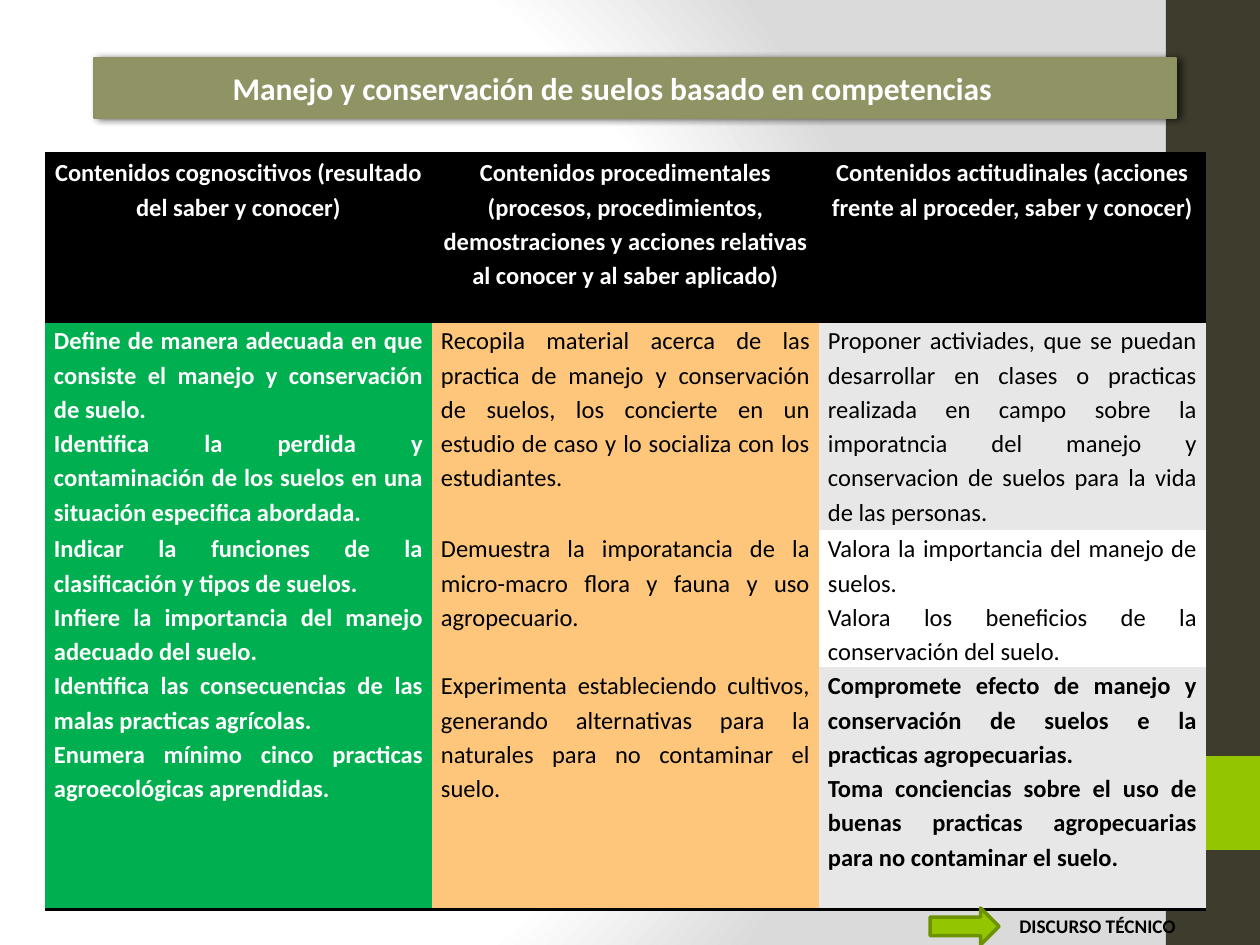
from dataclasses import dataclass

from lxml.etree import SubElement
from pptx import Presentation
from pptx.dml.color import RGBColor
from pptx.enum.shapes import MSO_SHAPE as Shape
from pptx.enum.text import MSO_ANCHOR as Anchor, MSO_AUTO_SIZE as AutoSize, PP_ALIGN as Align
from pptx.oxml import parse_xml
from pptx.oxml.ns import nsdecls, qn
from pptx.util import Emu, Pt


@dataclass(frozen=True)
class Theme:
    font: str = "Calibri"
    title_size: int = 18
    table_size: int = 14
    caption_size: int = 11
    white: str = "FFFFFF"
    black: str = "000000"
    shade: str = "DADADA"
    dark: str = "3E3D2D"
    lime: str = "94C600"
    lime_edge: str = "6D9200"
    olive: str = "909465"
    olive_edge: str = "8E9262"
    green: str = "00B050"
    orange: str = "FEC67A"
    grey: str = "E7E7E7"


THEME = Theme()
PX_PER_INCH = 126
NO_TABLE_STYLE = "{2D5ABB26-0587-4C30-8999-92F81FD0307C}"

TITLE = "Manejo y conservación de suelos basado en competencias"
CAPTION = "DISCURSO TÉCNICO"
HEADER = [
    ["Contenidos cognoscitivos (resultado del saber y conocer)"],
    ["Contenidos procedimentales",
     "(procesos, procedimientos, demostraciones y acciones relativas al conocer y al saber aplicado)"],
    ["Contenidos actitudinales (acciones frente al proceder, saber y conocer)"],
]
BODY = [
    [["Define de manera adecuada en que consiste el manejo y conservación de suelo.",
      "Identifica la perdida y contaminación de los suelos en una situación especifica abordada."],
     ["Recopila material acerca de las practica de manejo y conservación de suelos, "
      "los concierte en un estudio de caso y lo socializa con los estudiantes."],
     ["Proponer activiades, que se puedan desarrollar en clases o practicas realizada en campo "
      "sobre la imporatncia del manejo y conservacion de suelos para la vida de las personas."]],
    [["Indicar la funciones de la clasificación y tipos de suelos.",
      "Infiere la importancia del manejo adecuado del suelo."],
     ["Demuestra la imporatancia de la micro-macro flora y fauna y uso agropecuario."],
     ["Valora la importancia del manejo de suelos.",
      "Valora los beneficios de la conservación del suelo."]],
    [["Identifica las consecuencias de las malas practicas agrícolas.",
      "Enumera mínimo cinco practicas agroecológicas aprendidas."],
     ["Experimenta estableciendo cultivos, generando alternativas para la naturales "
      "para no contaminar el suelo."],
     ["Compromete efecto de manejo y conservación de suelos e la practicas agropecuarias.",
      "Toma conciencias sobre el uso de buenas practicas agropecuarias para no contaminar el suelo."]],
]
ROW_HEIGHTS = [168, 208, 137, 242]


def px(length):
    return Emu(round(length * 914400 / PX_PER_INCH))


def rgb(color):
    return RGBColor.from_string(color)


def write(frame, lines, *, size, color, bold=True, align=Align.LEFT, spacing=None):
    frame.word_wrap = True
    for number, line in enumerate(lines):
        para = frame.paragraphs[0] if number == 0 else frame.add_paragraph()
        para.alignment = align
        para.line_spacing = spacing
        span = para.add_run()
        span.text = line
        font = span.font
        font.name, font.size, font.bold = THEME.font, Pt(size), bold
        font.color.rgb = rgb(color)


def paint(shape, fill, edge=None, weight=1):
    shape.fill.solid()
    shape.fill.fore_color.rgb = rgb(fill)
    if edge:
        shape.line.color.rgb = rgb(edge)
        shape.line.width = Pt(weight)
    else:
        shape.line.fill.background()


def add_shape(page, kind, box, fill, edge=None, weight=1):
    shape = page.shapes.add_shape(kind, *map(px, box))
    shape.shadow.inherit = False
    paint(shape, fill, edge, weight)
    return shape


def set_background(page):
    """Radial gradient; its focus rectangle needs XML."""
    stops = [(0, THEME.white), (75, THEME.white), (100, THEME.shade)]
    stop_xml = "".join(
        f'<a:gs pos="{place * 1000}"><a:srgbClr val="{color}"/></a:gs>' for place, color in stops)
    page.element.cSld.insert(0, parse_xml(
        f'<p:bg {nsdecls("p", "a")}><p:bgPr><a:gradFill rotWithShape="1"><a:gsLst>{stop_xml}</a:gsLst>'
        '<a:path path="circle"><a:fillToRect l="20000" t="50000" r="100000" b="50000"/></a:path>'
        '</a:gradFill><a:effectLst/></p:bgPr></p:bg>'))


def add_side_band(page, box):
    left, top, width, height = box
    add_shape(page, Shape.RECTANGLE, box, THEME.dark)
    add_shape(page, Shape.RECTANGLE, (left, top + height * 4 // 5, width, width), THEME.lime)


def add_title(page, box):
    """Turn the title placeholder into a rounded, shadowed bar in front of the band."""
    title = page.shapes.title
    title.left, title.top, title.width, title.height = map(px, box)
    properties = title.element.spPr
    geometry = SubElement(properties, qn("a:prstGeom"), prst="roundRect")
    SubElement(geometry, qn("a:avLst"))
    paint(title, THEME.olive, THEME.olive_edge)
    properties.append(parse_xml(
        f'<a:effectLst {nsdecls("a")}><a:outerShdw blurRad="{Pt(4)}" dist="{Pt(2)}" dir="0">'
        f'<a:srgbClr val="{THEME.black}"><a:alpha val="60000"/></a:srgbClr></a:outerShdw></a:effectLst>'))
    frame = title.text_frame
    frame.auto_size = AutoSize.NONE
    frame.vertical_anchor = Anchor.MIDDLE
    write(frame, [TITLE], size=THEME.title_size, color=THEME.white)
    frame.paragraphs[0]._p.get_or_add_pPr().set("marL", str(px(PX_PER_INCH)))
    title.element.getparent().append(title.element)


def add_border(cell, side):
    line = SubElement(cell._tc.get_or_add_tcPr(), qn(f"a:{side}"), w=str(Pt(2)))
    SubElement(SubElement(line, qn("a:solidFill")), qn("a:srgbClr"), val=THEME.black)


def body_format(row, column):
    """Fill, text colour and weight of a body cell."""
    if column == 0:
        return THEME.green, THEME.white, True
    if column == 1:
        return THEME.orange, THEME.black, False
    return (THEME.grey if row % 2 else THEME.white), THEME.black, row == len(BODY)


def add_contents_table(page, box):
    rows = [HEADER] + BODY
    table = page.shapes.add_table(len(rows), len(HEADER), *map(px, box)).table
    table.first_row = table.horz_banding = False
    table._tbl.tblPr.find(qn("a:tableStyleId")).text = NO_TABLE_STYLE
    for column in table.columns:
        column.width = px(box[2] // len(HEADER))
    for r, entries in enumerate(rows):
        table.rows[r].height = px(ROW_HEIGHTS[r])
        for c, lines in enumerate(entries):
            cell = table.cell(r, c)
            cell.margin_left = cell.margin_right = px(9)
            cell.margin_top = cell.margin_bottom = 0
            if r == 0:
                add_border(cell, "lnT")
            if r in (0, len(BODY)):
                add_border(cell, "lnB")
            fill, color, bold = body_format(r, c) if r else (THEME.black, THEME.white, True)
            cell.fill.solid()
            cell.fill.fore_color.rgb = rgb(fill)
            write(cell.text_frame, lines, size=THEME.table_size, color=color, bold=bold,
                  align=Align.JUSTIFY if r else Align.CENTER, spacing=1.15)


def add_next_topic(page, box):
    left, top, width, height = box
    caption = page.shapes.add_textbox(*map(px, (left + 77, top, width - 77, height)))
    write(caption.text_frame, [CAPTION], size=THEME.caption_size, color=THEME.black)
    add_shape(page, Shape.RIGHT_ARROW, (left, top, 69, height), THEME.lime, THEME.lime_edge, 2)


def main():
    deck = Presentation()
    deck.slide_width, deck.slide_height = px(1260), px(945)
    page = deck.slides.add_slide(deck.slide_layouts[5])
    set_background(page)
    add_side_band(page, (1166, 0, 94, 945))
    add_title(page, (94, 58, 1082, 60))
    add_contents_table(page, (45, 154, 1161, sum(ROW_HEIGHTS)))
    add_next_topic(page, (930, 908, 266, 37))
    deck.save("out.pptx")


if __name__ == "__main__":
    main()
